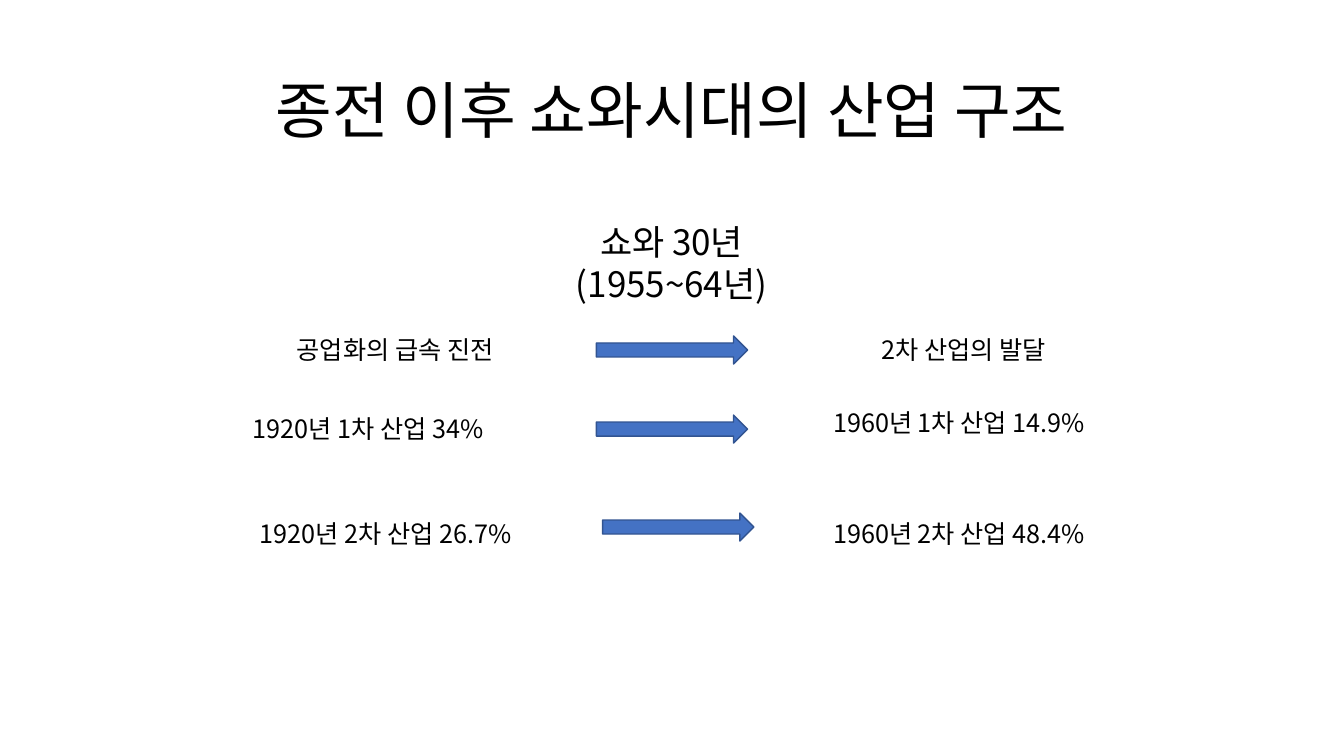
from dataclasses import dataclass

from lxml import etree
from pptx import Presentation
from pptx.dml.color import RGBColor
from pptx.enum.shapes import MSO_SHAPE
from pptx.enum.text import MSO_ANCHOR, MSO_AUTO_SIZE, PP_ALIGN
from pptx.oxml.ns import qn
from pptx.util import Pt

LEFT, CENTER = PP_ALIGN.LEFT, PP_ALIGN.CENTER
MIDDLE = MSO_ANCHOR.MIDDLE
NO_AUTOFIT = MSO_AUTO_SIZE.NONE
RIGHT_ARROW = MSO_SHAPE.RIGHT_ARROW
TITLE_ONLY = 5


@dataclass(frozen=True)
class Theme:
    font: str = "Noto Sans CJK KR"
    ink: RGBColor = RGBColor(0x00, 0x00, 0x00)
    arrow_fill: RGBColor = RGBColor(0x44, 0x72, 0xC4)
    arrow_line: RGBColor = RGBColor(0x32, 0x54, 0x91)
    title_size: int = 44
    period_size: int = 25
    body_size: int = 18


THEME = Theme()
TEXT_HEIGHT = 29
ARROW_WIDTH, ARROW_HEIGHT = 108, 20

# Each row: (text, left, top, width, alignment) before and after, then arrow (left, top)
ROWS = [
    (("공업화의 급속 진전", 155.5, 235.5, 253.5, CENTER),
     ("2차 산업의 발달 ", 551, 235.5, 278.5, CENTER),
     (426, 240)),
    (("1920년 1차 산업 34%", 173.5, 291.5, 208, LEFT),
     ("1960년 1차 산업 14.9%", 578, 287.5, 214, CENTER),
     (426, 296.5)),
    (("1920년 2차 산업 26.7%", 178.5, 366.5, 208, LEFT),
     ("1960년 2차 산업 48.4%", 578, 366.5, 214, CENTER),
     (430.5, 366.5)),
]


def write_text(frame, text, size, alignment):
    frame.word_wrap = True
    frame.auto_size = NO_AUTOFIT
    para = frame.paragraphs[0]
    para.text = text
    para.alignment = alignment
    font = para.font
    font.size = Pt(size)
    font.name = THEME.font
    font.color.rgb = THEME.ink
    # Hangul takes its typeface from the East Asian font
    defaults = para._p.pPr.find(qn("a:defRPr"))
    etree.SubElement(defaults, qn("a:ea")).set("typeface", THEME.font)


def set_title(page, text):
    title = page.shapes.title
    title.left, title.top = Pt(66), Pt(29)
    title.width, title.height = Pt(828), Pt(104.5)
    write_text(title.text_frame, text, THEME.title_size, CENTER)
    title.text_frame.vertical_anchor = MIDDLE
    title.text_frame.paragraphs[0].line_spacing = 0.9


def add_text(page, text, left, top, width, alignment,
             height=TEXT_HEIGHT, size=THEME.body_size):
    box = page.shapes.add_textbox(Pt(left), Pt(top), Pt(width), Pt(height))
    write_text(box.text_frame, text, size, alignment)


def add_arrow(page, left, top):
    arrow = page.shapes.add_shape(
        RIGHT_ARROW, Pt(left), Pt(top), Pt(ARROW_WIDTH), Pt(ARROW_HEIGHT))
    arrow.shadow.inherit = False
    arrow.fill.solid()
    arrow.fill.fore_color.rgb = THEME.arrow_fill
    arrow.line.color.rgb = THEME.arrow_line
    arrow.line.width = Pt(1)


def main():
    deck = Presentation()
    deck.slide_width, deck.slide_height = Pt(960), Pt(540)
    page = deck.slides.add_slide(deck.slide_layouts[TITLE_ONLY])
    set_title(page, "종전 이후 쇼와시대의 산업 구조")
    add_text(page, "쇼와 30년(1955~64년)", 381.5, 154, 196.5, CENTER,
             height=67.5, size=THEME.period_size)
    for before, after, arrow in ROWS:
        add_text(page, *before)
        add_arrow(page, *arrow)
        add_text(page, *after)
    deck.save("out.pptx")


if __name__ == "__main__":
    main()
